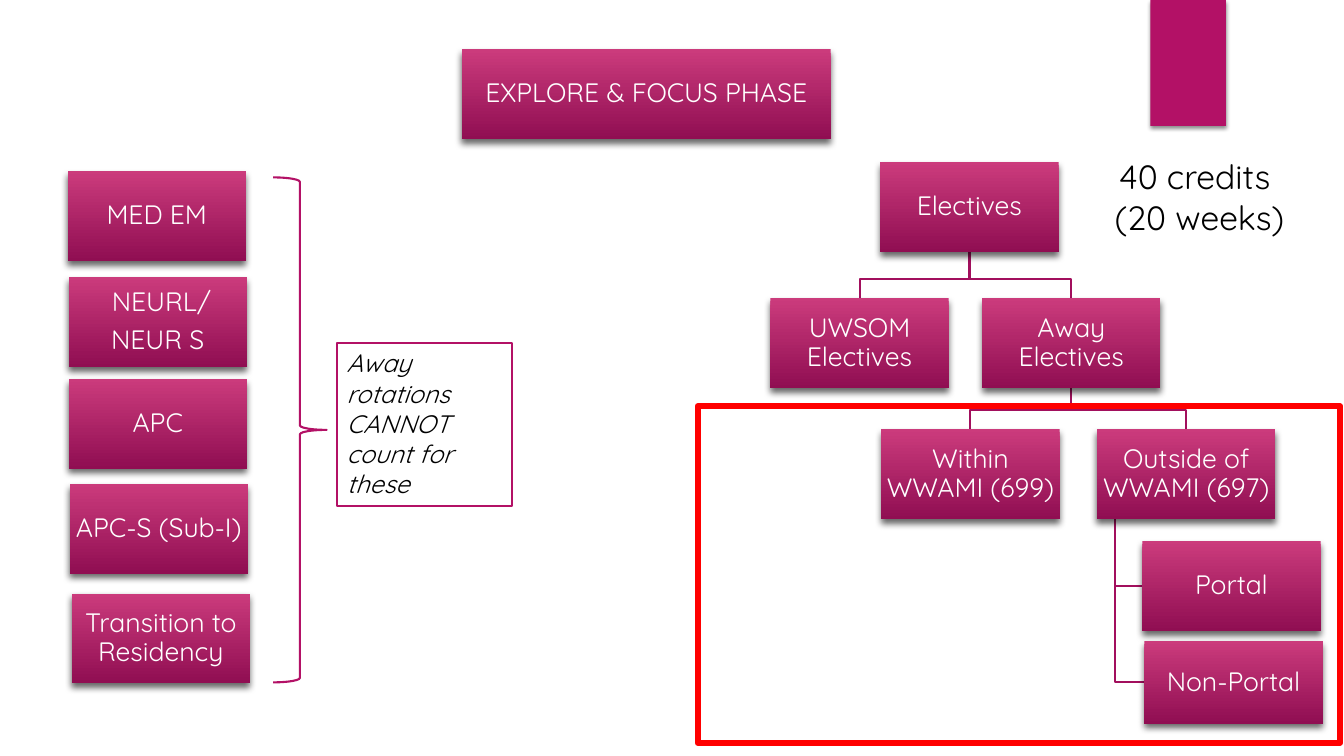
import dataclasses

import lxml.etree
import pptx
import pptx.dml.color
import pptx.enum.shapes
import pptx.enum.text
import pptx.oxml.ns
import pptx.util

Inches = pptx.util.Inches
Pt = pptx.util.Pt
RGB = pptx.dml.color.RGBColor.from_string
SHAPE = pptx.enum.shapes.MSO_SHAPE
ALIGN = pptx.enum.text.PP_ALIGN
ANCHOR = pptx.enum.text.MSO_ANCHOR
FIT = pptx.enum.text.MSO_AUTO_SIZE
qn = pptx.oxml.ns.qn


@dataclasses.dataclass(frozen=True)
class Theme:
    font: str = "Quicksand"
    accent: str = "B31166"
    branch: str = "A20F5D"
    grad_top: str = "CB3B7C"
    grad_bottom: str = "900E52"
    frame: str = "FF0000"
    white: str = "FFFFFF"
    black: str = "000000"
    box_size: float = 19
    note_size: float = 18
    credit_size: float = 24
    line: float = 1.5
    frame_line: float = 4.5


THEME = Theme()
BOX_W, BOX_H = 1.77, 0.89
BEND, INDENT = 0.19, 0.18
TITLE = (4.58, 0.49, 3.66, BOX_H)
REQUIRED = {
    "MED EM": (0.67, 1.7),
    " NEURL/\nNEUR S": (0.68, 2.75),
    "APC": (0.68, 3.76),
    "APC-S (Sub-I)": (0.69, 4.8),
    "Transition to Residency": (0.71, 5.89),
}
ELECTIVES = {
    "Electives": (8.73, 1.61),
    "UWSOM Electives": (7.64, 2.96),
    "Away Electives": (9.74, 2.96),
    "Within WWAMI (699)": (8.74, 4.26),
    "Outside of WWAMI (697)": (10.88, 4.26),
    "Portal": (11.33, 5.37),
    "Non-Portal": (11.35, 6.36, BOX_W, 0.82),
}
BRANCHES = {
    "Electives": ("UWSOM Electives", "Away Electives"),
    "Away Electives": ("Within WWAMI (699)", "Outside of WWAMI (697)"),
}
SIDE_BRANCHES = {"Outside of WWAMI (697)": ("Portal", "Non-Portal")}


def apply(obj, values):
    for name, value in values.items():
        setattr(obj, name, value)


def bounds(x, y, w=BOX_W, h=BOX_H):
    return x, y, w, h


def write(shape, text, size, color, frame, para, italic=None):
    tf = shape.text_frame
    apply(tf, {"word_wrap": True, "auto_size": FIT.NONE, **frame})
    tf.text = text
    for p in tf.paragraphs:
        apply(p, para)
        for r in p.runs:
            apply(r.font, {"name": THEME.font, "size": Pt(size), "italic": italic})
            r.font.color.rgb = RGB(color)


def add_shadow(shape, alpha, blur, dist):
    shape.shadow.inherit = False
    effects = shape._element.spPr.find(qn("a:effectLst"))
    outer = lxml.etree.SubElement(
        effects, qn("a:outerShdw"), blurRad=str(Pt(blur)), dist=str(Pt(dist)),
        dir="5400000", algn="ctr", rotWithShape="0")
    color = lxml.etree.SubElement(outer, qn("a:srgbClr"), val=THEME.black)
    lxml.etree.SubElement(color, qn("a:alpha"), val=str(alpha * 1000))


def set_line(shape, color, width):
    shape.line.color.rgb = RGB(color)
    shape.line.width = Pt(width)


def format_box(shape, text):
    shape.fill.gradient()
    shape.fill.gradient_angle = 270
    colors = (THEME.grad_top, THEME.grad_bottom)
    for position, (stop, color) in enumerate(zip(shape.fill.gradient_stops, colors)):
        stop.position = position
        stop.color.rgb = RGB(color)
    shape.line.fill.background()
    add_shadow(shape, 60, 5, 3)
    margins = dict.fromkeys(
        ("margin_left", "margin_right", "margin_top", "margin_bottom"), Inches(0.01))
    write(shape, text, THEME.box_size, THEME.white,
          {"vertical_anchor": ANCHOR.MIDDLE, **margins},
          {"alignment": ALIGN.CENTER, "line_spacing": 0.9,
           "space_before": Pt(0), "space_after": Pt(6.65)})


def add_plain(s, kind, at, fill=None, line=None, width=THEME.line):
    sp = s.shapes.add_shape(kind, *map(Inches, at))
    sp.shadow.inherit = False
    if fill:
        sp.fill.solid()
        sp.fill.fore_color.rgb = RGB(fill)
    else:
        sp.fill.background()
    if line:
        set_line(sp, line, width)
    else:
        sp.line.fill.background()
    return sp


def add_title(s, text):
    sp = s.shapes.title
    apply(sp, dict(zip(("left", "top", "width", "height"), map(Inches, TITLE))))
    format_box(sp, text)


def add_box(s, text, at):
    format_box(add_plain(s, SHAPE.RECTANGLE, bounds(*at)), text)


def add_polyline(s, points):
    start, *rest = [(Inches(x), Inches(y)) for x, y in points]
    builder = s.shapes.build_freeform(*start)
    builder.add_line_segments(rest, close=False)
    sp = builder.convert_to_shape()
    sp.fill.background()
    sp.shadow.inherit = False
    set_line(sp, THEME.branch, THEME.line)


def add_branch(s, parent, child):
    px, py, pw, ph = bounds(*ELECTIVES[parent])
    cx, cy, cw, _ = bounds(*ELECTIVES[child])
    start, end, bend = px + pw / 2, cx + cw / 2, cy - BEND
    add_polyline(s, [(start, py + ph), (start, bend), (end, bend), (end, cy)])


def add_side_branch(s, parent, child):
    px, py, _, ph = bounds(*ELECTIVES[parent])
    cx, cy, _, ch = bounds(*ELECTIVES[child])
    x, middle = px + INDENT, cy + ch / 2
    add_polyline(s, [(x, py + ph), (x, middle), (cx, middle)])


def add_credits(s):
    sp = s.shapes.add_textbox(*map(Inches, (10.4, 1.5, 2.99, 0.91)))
    write(sp, "40 credits \n(20 weeks)", THEME.credit_size, THEME.black,
          {}, {"alignment": ALIGN.CENTER})


def add_note(s):
    sp = add_plain(s, SHAPE.RECTANGLE, (3.34, 3.4, 1.74, 1.62), THEME.white, THEME.accent)
    write(sp, "Away rotations CANNOT count for\nthese", THEME.note_size, THEME.black,
          {"vertical_anchor": ANCHOR.TOP}, {"alignment": ALIGN.LEFT}, italic=True)


def main():
    prs = pptx.Presentation()
    prs.slide_width, prs.slide_height = Inches(13.33), Inches(7.5)
    s = prs.slides.add_slide(prs.slide_layouts[5])
    add_title(s, "EXPLORE & FOCUS PHASE")
    tab = add_plain(s, SHAPE.RECTANGLE, (11.41, 0, 0.75, 1.25), THEME.accent)
    add_shadow(tab, 45, 3, 2)
    for links, draw in ((SIDE_BRANCHES, add_side_branch), (BRANCHES, add_branch)):
        for parent, children in links.items():
            for child in children:
                draw(s, parent, child)
    for text, at in {**REQUIRED, **ELECTIVES}.items():
        add_box(s, text, at)
    add_plain(s, SHAPE.RECTANGLE, (6.92, 4.03, 6.37, 3.34),
              line=THEME.frame, width=THEME.frame_line)
    add_credits(s)
    add_note(s)
    add_plain(s, SHAPE.RIGHT_BRACE, (2.71, 1.76, 0.53, 5.01), line=THEME.accent)
    prs.save("out.pptx")


if __name__ == "__main__":
    main()
